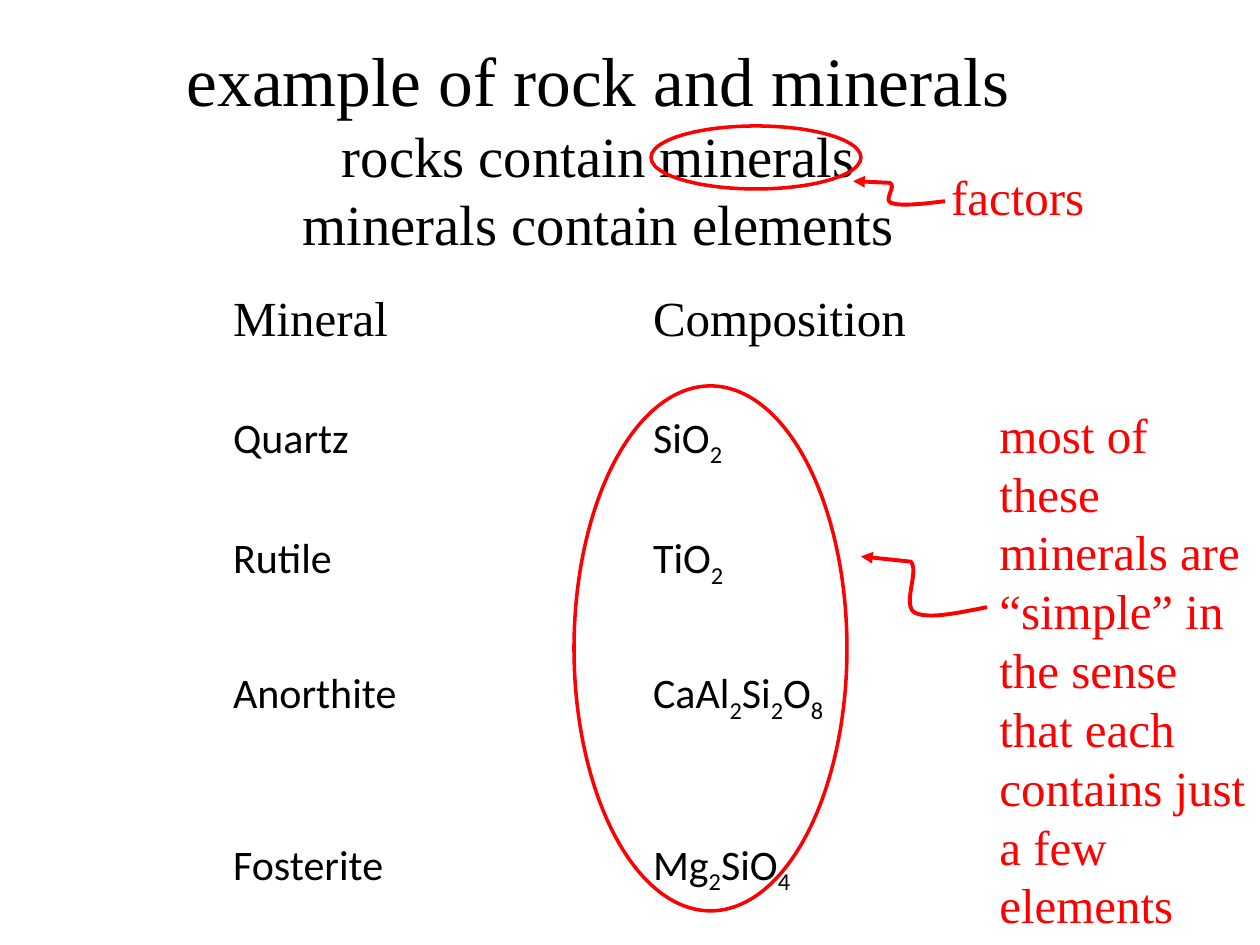
from lxml.etree import SubElement
from pptx import Presentation
from pptx.dml.color import RGBColor
from pptx.enum.shapes import MSO_SHAPE as Shape
from pptx.enum.text import MSO_ANCHOR as Anchor, PP_ALIGN as Align
from pptx.oxml.ns import qn
from pptx.util import Pt

RED = "FF0000"
BLACK = "000000"
SERIF = "Times New Roman"
MINERALS = [
    ("Quartz", "SiO2"),
    ("Rutile", "TiO2"),
    ("", ""),
    ("Anorthite", "CaAl2Si2O8"),
    ("Fosterite", "Mg2SiO4"),
]
ROW_HEIGHTS = [69, 69, 40, 37, 98, 37]


def paint(color_format, value):
    """Set a colour format from a hex string."""
    color_format.rgb = RGBColor.from_string(value)


def write(para, text, size=28, color=BLACK, font=SERIF, subscript=False):
    """Append a formatted span of text to a paragraph."""
    span = para.add_run()
    span.text = text
    span.font.size = Pt(size)
    span.font.name = font
    span.font.bold = False
    paint(span.font.color, color)
    if subscript:
        span.font._element.set("baseline", "-25000")


def add_box(page, left, top, width, height):
    """Add a wrapping text box and return its text frame."""
    frame = page.shapes.add_textbox(Pt(left), Pt(top), Pt(width), Pt(height)).text_frame
    frame.word_wrap = True
    return frame


def add_title(page, lines):
    """Add the centred title, one (text, size) pair per line."""
    frame = add_box(page, 18, 24, 648, 120)
    frame.vertical_anchor = Anchor.MIDDLE
    para = frame.paragraphs[0]
    para.alignment = Align.CENTER
    for number, (text, size) in enumerate(lines):
        if number:
            para.add_line_break()
        write(para, text, size=size)


def add_note(page, text, left, top, width, height):
    """Add a red remark."""
    write(add_box(page, left, top, width, height).paragraphs[0], text, color=RED)


def outline(shape, width):
    """Leave a shape with only a red line."""
    shape.shadow.inherit = False
    shape.fill.background()
    shape.line.width = Pt(width)
    paint(shape.line.color, RED)


def add_ring(page, left, top, width, height):
    """Add a red ellipse around something."""
    ring = page.shapes.add_shape(Shape.OVAL, Pt(left), Pt(top), Pt(width), Pt(height))
    outline(ring, 2)


def bezier(start, first, second, end, steps=12):
    """Return the points along a cubic curve, without its start."""
    return [
        tuple(
            (1 - t) ** 3 * a + 3 * (1 - t) ** 2 * t * b + 3 * (1 - t) * t**2 * c + t**3 * d
            for a, b, c, d in zip(start, first, second, end)
        )
        for t in (step / steps for step in range(1, steps + 1))
    ]


def add_squiggle(page, tip, bend, *curves):
    """Add a curved red line with an arrowhead at its tip."""
    points = [bend]
    for curve in curves:
        points += bezier(points[-1], *curve)
    builder = page.shapes.build_freeform(Pt(tip[0]), Pt(tip[1]))
    builder.add_line_segments([(Pt(x), Pt(y)) for x, y in points], close=False)
    squiggle = builder.convert_to_shape()
    outline(squiggle, 2.25)
    SubElement(squiggle.line._get_or_add_ln(), qn("a:headEnd"), type="triangle")


def write_formula(para, formula):
    """Write a mineral name or formula with its digits lowered."""
    for char in formula:
        write(para, char, size=24, font="Calibri", subscript=char.isdigit())


def add_mineral_table(page):
    """Add the table of minerals and their composition."""
    rows = [("Mineral", "Composition"), *MINERALS]
    table = page.shapes.add_table(
        len(rows), 2, Pt(126), Pt(163.5), Pt(480), Pt(sum(ROW_HEIGHTS))
    ).table
    for index, (values, height) in enumerate(zip(rows, ROW_HEIGHTS)):
        table.rows[index].height = Pt(height)
        for cell, text in zip(table.rows[index].cells, values):
            cell.fill.background()
            para = cell.text_frame.paragraphs[0]
            if index == 0:
                write(para, text)
            elif text.isalpha():
                write(para, text, size=24, font="Calibri")
            else:
                write_formula(para, text)


def main():
    """Build the slide and save it."""
    deck = Presentation()
    deck.slide_width, deck.slide_height = Pt(720), Pt(540)
    page = deck.slides.add_slide(deck.slide_layouts[6])
    add_title(page, [
        ("example of rock and minerals", 39.6),
        ("rocks contain minerals", 32.4),
        ("minerals contain elements", 32.4),
    ])
    add_mineral_table(page)
    add_ring(page, 372, 72, 120, 36)
    add_note(page, "factors", 536.4, 91.5, 156, 41)
    add_squiggle(
        page, (487.5, 103.5), (508.5, 104.5),
        ((512.5, 106.5), (504.5, 114.5), (509.5, 116)),
        ((515, 118), (527.5, 116.5), (540, 115)),
    )
    add_ring(page, 328, 220.5, 156, 300)
    add_note(
        page,
        "most of these minerals are “simple” in the sense that each contains just a few elements",
        564, 227.5, 156, 312.5,
    )
    add_squiggle(
        page, (492, 318), (520.5, 321),
        ((525.5, 326), (515.5, 345.5), (522.5, 350)),
        ((530, 354), (546.5, 350.5), (564, 347)),
    )
    deck.save("out.pptx")


if __name__ == "__main__":
    main()
